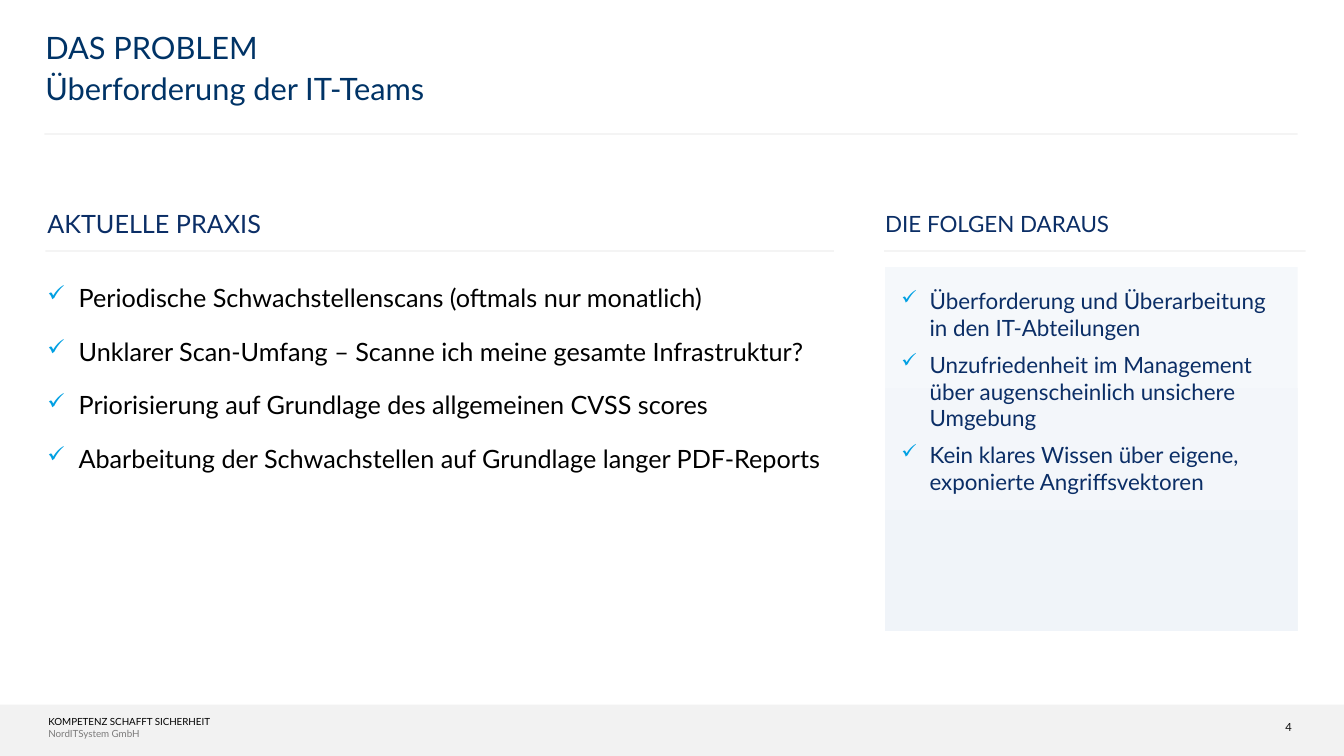
from lxml.etree import SubElement
from pptx import Presentation
from pptx.dml.color import RGBColor
from pptx.enum.shapes import MSO_CONNECTOR, MSO_SHAPE
from pptx.enum.text import MSO_ANCHOR, PP_ALIGN
from pptx.oxml.ns import qn
from pptx.util import Inches, Pt

FONT = "Lato"
COLORS = {
    "title": "003366",
    "navy": "0B2E66",
    "check": "00A0E3",
    "black": "000000",
    "number": "0D0D0D",
    "company": "7C7B7B",
    "footer": "F2F2F2",
    "panel_top": "F5F8FB",
    "panel_bottom": "F0F4F9",
}
PRACTICE = [
    "Periodische Schwachstellenscans (oftmals nur monatlich)",
    "Unklarer Scan-Umfang – Scanne ich meine gesamte Infrastruktur?",
    "Priorisierung auf Grundlage des allgemeinen CVSS scores",
    "Abarbeitung der Schwachstellen auf Grundlage langer PDF-Reports",
]
CONSEQUENCES = [
    "Überforderung und Überarbeitung in den IT-Abteilungen",
    "Unzufriedenheit im Management über augenscheinlich unsichere Umgebung",
    "Kein klares Wissen über eigene, exponierte Angriffsvektoren",
]


def rgb(name):
    return RGBColor.from_string(COLORS[name])


def add_check(p, indent):
    """Give the paragraph a hanging check mark."""
    pPr = p._p.get_or_add_pPr()
    pPr.set("marL", str(Inches(indent)))
    pPr.set("indent", str(-Inches(indent)))
    color = SubElement(pPr, qn("a:buClr"))
    SubElement(color, qn("a:srgbClr"), val=COLORS["check"])
    SubElement(pPr, qn("a:buSzPct"), val="88000")
    SubElement(pPr, qn("a:buChar"), char="✓")


def add_text(slide, box, lines, size, color, insets=(0, 0, 0, 0), align=PP_ALIGN.LEFT,
             anchor=MSO_ANCHOR.TOP, wrap=True, check_indent=None, spacing=None,
             before=0, after=0):
    tf = slide.shapes.add_textbox(*map(Inches, box)).text_frame
    tf.word_wrap = wrap
    tf.vertical_anchor = anchor
    tf.margin_left, tf.margin_top, tf.margin_right, tf.margin_bottom = map(Inches, insets)
    for i, line in enumerate(lines):
        p = tf.paragraphs[0] if i == 0 else tf.add_paragraph()
        p.alignment = align
        p.line_spacing = spacing
        p.space_before = Pt(before if i else 0)
        p.space_after = Pt(after)
        if check_indent:
            add_check(p, check_indent)
        r = p.add_run()
        r.text = line
        r.font.name = FONT
        r.font.size = Pt(size)
        r.font.color.rgb = rgb(color)
    return tf


def add_rect(slide, box, color, end_color=None):
    """Add a borderless rectangle, shaded downwards if end_color is given."""
    sp = slide.shapes.add_shape(MSO_SHAPE.RECTANGLE, *map(Inches, box))
    sp.shadow.inherit = False
    sp.line.fill.background()
    if end_color:
        sp.fill.gradient()
        sp.fill.gradient_angle = 270
        for stop, name in zip(sp.fill.gradient_stops, (color, end_color)):
            stop.color.rgb = rgb(name)
    else:
        sp.fill.solid()
        sp.fill.fore_color.rgb = rgb(color)


def add_rule(slide, left, right, y):
    """Add a translucent hairline."""
    line = slide.shapes.add_connector(
        MSO_CONNECTOR.STRAIGHT, Inches(left), Inches(y), Inches(right), Inches(y))
    line.line.width = Pt(0.25)
    line.line.color.rgb = rgb("black")
    spPr = line._element.spPr
    SubElement(spPr.find(".//" + qn("a:srgbClr")), qn("a:alpha"), val="35000")
    SubElement(spPr, qn("a:effectLst"))


def add_footer(slide):
    add_rect(slide, (0, 6.99, 13.33, 0.51), "footer")
    add_text(slide, (12.69, 7.15, 0.18, 0.12), ["4"], 8, "number",
             align=PP_ALIGN.CENTER, wrap=False)
    tf = add_text(slide, (0.44, 7.1, 2.67, 0.25),
                  ["KOMPETENZ SCHAFFT SICHERHEIT", "NordITSystem GmbH"], 7, "black",
                  insets=(0.04, 0, 0.04, 0), before=0.5)
    tf.paragraphs[1].runs[0].font.color.rgb = rgb("company")


def main():
    prs = Presentation()
    prs.slide_width, prs.slide_height = Inches(13.33), Inches(7.5)
    slide = prs.slides.add_slide(prs.slide_layouts[6])

    add_footer(slide)
    for left, right, y in ((0.44, 12.87, 1.33), (0.45, 8.27, 2.49), (8.77, 12.95, 2.49)):
        add_rule(slide, left, right, y)

    add_text(slide, (0.45, 0.33, 8.33, 0.4), ["DAS PROBLEM"], 22, "title", spacing=0.9)
    add_text(slide, (0.45, 0.69, 8.33, 0.47), ["Überforderung der IT-Teams"], 22, "title")

    for left, heading, size in ((0.47, "AKTUELLE PRAXIS", 18), (8.78, "DIE FOLGEN DARAUS", 16)):
        add_text(slide, (left, 2.07, 4.09, 0.29), [heading], size, "navy",
                 anchor=MSO_ANCHOR.MIDDLE)

    add_text(slide, (0.47, 2.65, 7.82, 3.61), PRACTICE, 18, "black", insets=(0, 0, 0, 0.2),
             check_indent=0.31, spacing=1.5, before=3, after=3)
    panel = (8.78, 2.65, 4.09, 3.61)
    add_rect(slide, panel, "panel_top", "panel_bottom")
    add_text(slide, panel, CONSEQUENCES, 16, "navy", insets=(0.16, 0.2, 0.16, 0.3),
             check_indent=0.28, before=4, after=3)

    prs.save("out.pptx")


if __name__ == "__main__":
    main()
